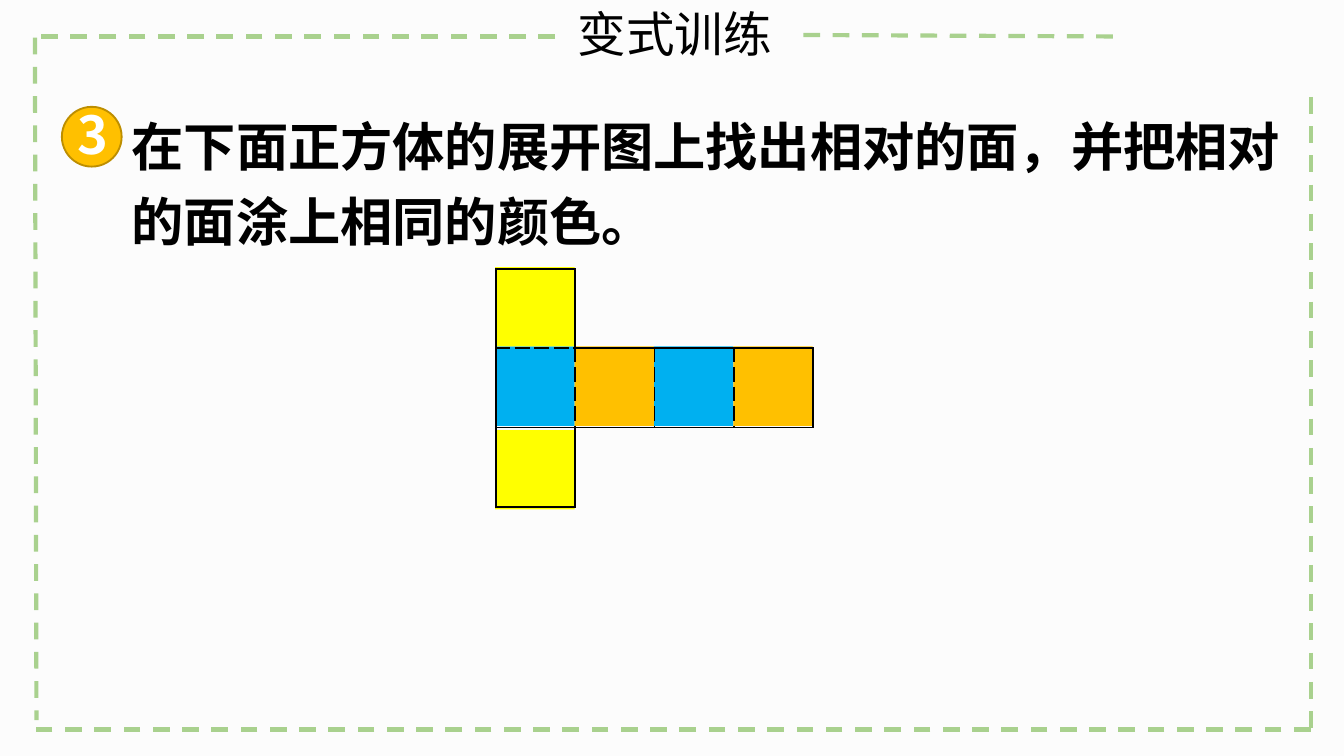
import pptx
import pptx.util
import pptx.dml.color
import pptx.enum.dml
import pptx.enum.shapes
import pptx.enum.text
import pptx.oxml
import pptx.oxml.ns
from lxml import etree

Cm = pptx.util.Cm
SHAPES = pptx.enum.shapes.MSO_SHAPE

THEME = {
    "background": "FCFCFC", "frame": "A9D18E", "ink": "000000", "white": "FFFFFF",
    "blue": "00B0F0", "yellow": "FFFF00", "gold": "FFC000", "badge_line": "BD8E00",
    "sans": "Noto Sans CJK SC", "serif": "Times New Roman",
    "title_size": 26, "body_size": 28, "frame_width": 2.25, "border_width": 1,
}

TITLE = "变式训练"
QUESTION = "在下面正方体的展开图上找出相对的面，并把相对的面涂上相同的颜色。"
NUMBER = "3"

# Dashed page frame: x1, y1, x2, y2 in centimetres
FRAME = [
    (0.66, 0.71, 0.69, 13.61),
    (24.77, 1.83, 24.77, 13.79),
    (24.77, 13.79, 0.69, 13.79),
    (21.03, 0.69, 15.04, 0.66),
    (10.49, 0.69, 0.69, 0.69),
]

# Cube net
FACE = 1.5
FACES_LEFT = 9.36
ROW_TOPS = [5.05, 6.55, 8.13]
FACES = [  # row, column, colour
    (1, 2, "blue"), (1, 0, "blue"), (2, 0, "yellow"),
    (0, 0, "yellow"), (1, 1, "gold"), (1, 3, "gold"),
]
NET_LEFT, NET_TOP = 9.37, 5.08
NET_BORDERS = [  # sides per cell; "-" is solid, "~" is dashed
    ["L- R- T- B~", "L- B-", "B-", "B-"],
    ["L- R~ T~ B-", "L~ R~ T- B-", "L~ R~ T- B-", "L~ R- T- B-"],
    ["L- R- T- B-", "L- T-", "T-", "T-"],
]
NO_STYLE = "{2D5ABB26-0587-4C30-8999-92F81FD0307C}"


def colour(name):
    return pptx.dml.color.RGBColor.from_string(THEME[name])


def add_text(page, place, text, size, font, ink="ink", bold=False, wrap=True):
    box = page.shapes.add_textbox(*map(Cm, place))
    box.text_frame.word_wrap = wrap
    box.text_frame.text = text
    para = box.text_frame.paragraphs[0]
    span = para.runs[0]
    span.font.size = pptx.util.Pt(THEME[size])
    span.font.name = THEME[font]
    span.font.bold = bold
    span.font.color.rgb = colour(ink)
    east_asian = etree.SubElement(span.font._element, pptx.oxml.ns.qn("a:ea"))
    east_asian.set("typeface", THEME["sans"])
    return para


def add_shape(page, kind, place, fill, line=None):
    shape = page.shapes.add_shape(kind, *map(Cm, place))
    shape.shadow.inherit = False
    shape.fill.solid()
    shape.fill.fore_color.rgb = colour(fill)
    if line:
        shape.line.color.rgb = colour(line)
        shape.line.width = pptx.util.Pt(THEME["border_width"])
    else:
        shape.line.fill.background()


def add_frame_line(page, ends):
    line = page.shapes.add_connector(
        pptx.enum.shapes.MSO_CONNECTOR.STRAIGHT, *map(Cm, ends))
    line.line.color.rgb = colour("frame")
    line.line.width = pptx.util.Pt(THEME["frame_width"])
    line.line.dash_style = pptx.enum.dml.MSO_LINE.DASH
    etree.SubElement(line._element.spPr, pptx.oxml.ns.qn("a:effectLst"))


def set_borders(cell, sides):
    properties = cell._tc.get_or_add_tcPr()
    styles = {side[0]: side[1] for side in sides.split()}
    width = pptx.util.Pt(THEME["border_width"])
    for side in "LRTB":
        if side in styles:
            dash = "dash" if styles[side] == "~" else "solid"
            paint = (f'<a:solidFill><a:srgbClr val="{THEME["ink"]}"/></a:solidFill>'
                     f'<a:prstDash val="{dash}"/>')
        else:
            paint = "<a:noFill/>"
        properties.append(pptx.oxml.parse_xml(
            f'<a:ln{side} {pptx.oxml.ns.nsdecls("a")} w="{width}">{paint}</a:ln{side}>'))


def add_net(page):
    rows, columns = len(NET_BORDERS), len(NET_BORDERS[0])
    table = page.shapes.add_table(
        rows, columns, Cm(NET_LEFT), Cm(NET_TOP),
        Cm(FACE * columns), Cm(FACE * rows)).table
    table.first_row = table.horz_banding = False
    table._tbl.tblPr.find(pptx.oxml.ns.qn("a:tableStyleId")).text = NO_STYLE
    for row, row_borders in enumerate(NET_BORDERS):
        for column, sides in enumerate(row_borders):
            cell = table.cell(row, column)
            set_borders(cell, sides)
            cell.fill.background()
    table.cell(0, 1).merge(table.cell(0, 3))


def main():
    deck = pptx.Presentation()
    deck.slide_width, deck.slide_height = Cm(25.4), Cm(14.29)
    page = deck.slides.add_slide(deck.slide_layouts[6])
    page.background.fill.solid()
    page.background.fill.fore_color.rgb = colour("background")

    for ends in FRAME:
        add_frame_line(page, ends)
    add_text(page, (10.67, -0.05, 4.39, 1.37), TITLE, "title_size", "sans")
    question = add_text(page, (2.24, 1.8, 22.5, 3.12), QUESTION,
                        "body_size", "serif", bold=True)
    question.line_spacing = 1.2

    for row, column, fill in FACES:
        place = (FACES_LEFT + column * FACE, ROW_TOPS[row], FACE, FACE)
        add_shape(page, SHAPES.RECTANGLE, place, fill)
    add_net(page)

    add_shape(page, SHAPES.OVAL, (1.17, 2.02, 1.13, 1.13), "gold", "badge_line")
    number = add_text(page, (1.22, 1.8, 1.02, 1.45), NUMBER, "body_size", "sans",
                      ink="white", bold=True, wrap=False)
    number.alignment = pptx.enum.text.PP_ALIGN.CENTER
    deck.save("out.pptx")


if __name__ == "__main__":
    main()
